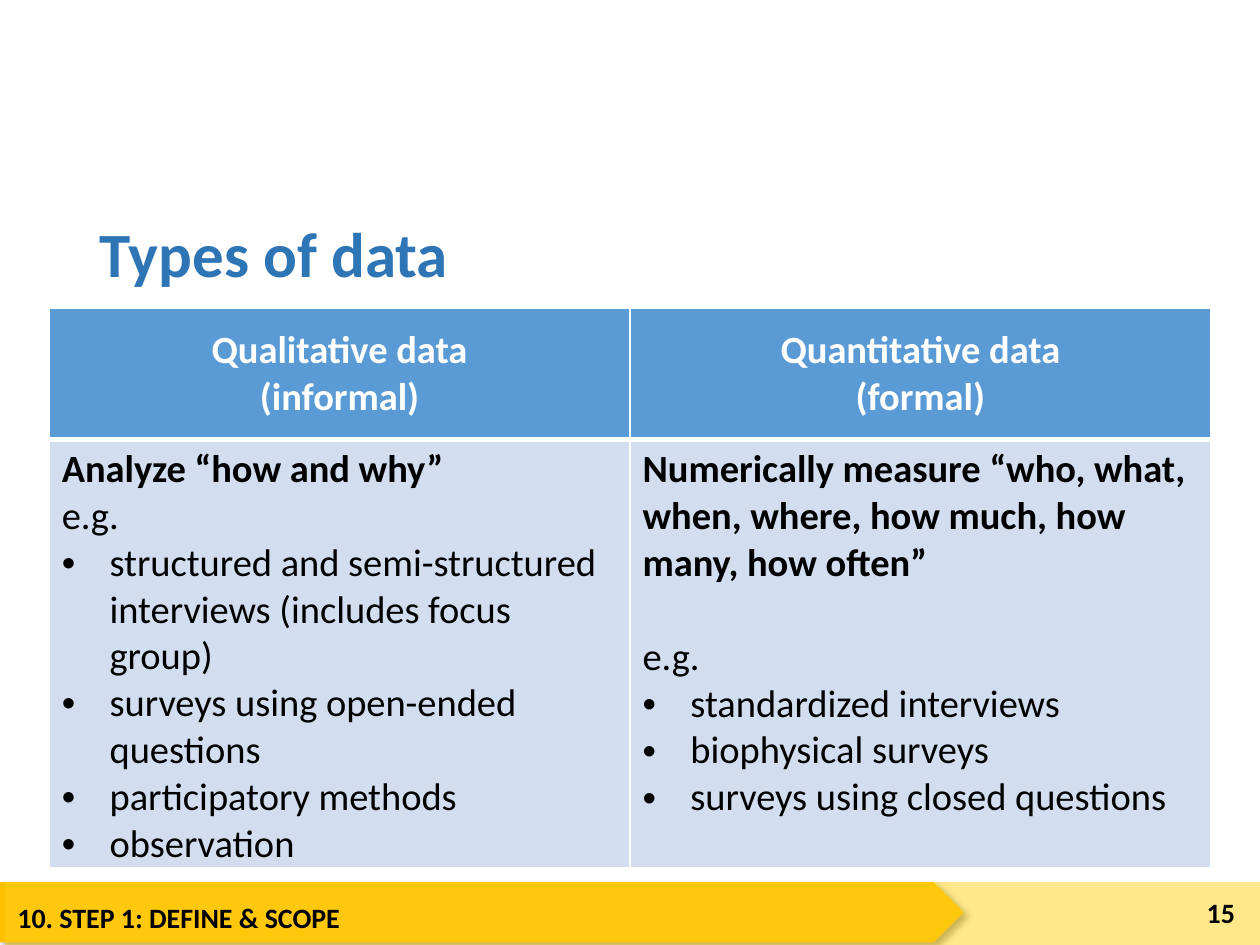
from lxml import etree
from pptx import Presentation
from pptx import util as u
from pptx.dml.color import RGBColor
from pptx.enum import shapes, text
from pptx.oxml import ns

WIDTH, HEIGHT = 10, 7.5
MARGIN, COLUMN = 0.39, 4.61
BANNER_TOP = 7
INDENT = 0.38
FONT = "Calibri"
HEADINGS = [("Qualitative data", "(informal)"), ("Quantitative data", "(formal)")]
DETAILS = [
    ("Analyze “how and why”", 0,
     ["structured and semi-structured interviews (includes focus group)",
      "surveys using open-ended questions", "participatory methods", "observation"]),
    ("Numerically measure “who, what, when, where, how much, how many, how often”", 27,
     ["standardized interviews", "biophysical surveys", "surveys using closed questions"]),
]


def color(value):
    """Turn a hex string into a colour."""
    return RGBColor.from_string(value)


def inches(*lengths):
    """Turn numbers into lengths in inches."""
    return [u.Inches(length) for length in lengths]


def child(parent, tag, **attributes):
    """Append a DrawingML element and return it."""
    element = etree.SubElement(parent, ns.qn(f"a:{tag}"))
    for key, value in attributes.items():
        element.set(key, str(value))
    return element


def add_run(paragraph, words, size, ink="000000", bold=True):
    """Add one formatted run to a paragraph."""
    run = paragraph.add_run()
    run.text = words
    run.font.name, run.font.size, run.font.bold = FONT, u.Pt(size), bold
    run.font.color.rgb = color(ink)


def add_label(slide, box, words, align, anchor):
    """Add a bold one-line text box."""
    frame = slide.shapes.add_textbox(*inches(*box)).text_frame
    frame.word_wrap, frame.vertical_anchor = True, anchor
    frame.paragraphs[0].alignment = align
    add_run(frame.paragraphs[0], words, 16)


def add_band(slide, preset, box, fill):
    """Add a borderless band of one colour."""
    band = slide.shapes.add_shape(preset, *inches(*box))
    band.shadow.inherit = False
    band.fill.solid()
    band.fill.fore_color.rgb = color(fill)
    band.line.fill.background()
    return band


def add_banner(slide):
    """Add the section arrow, its pale overlay, the section name and the page number."""
    arrow = add_band(slide, shapes.MSO_SHAPE.PENTAGON, (0, BANNER_TOP, 7.65, 0.48), "FFC000")
    effects = arrow._element.spPr.find(ns.qn("a:effectLst"))
    shadow = child(effects, "outerShdw", blurRad=u.Pt(4), dist=u.Pt(3), dir=45 * 60000)
    child(child(shadow, "srgbClr", val="000000"), "alpha", val=40000)
    overlay = add_band(slide, shapes.MSO_SHAPE.RECTANGLE,
                       (0.04, BANNER_TOP, WIDTH - 0.04, 0.53), "FFD01B")
    child(overlay._element.spPr.find(".//" + ns.qn("a:srgbClr")), "alpha", val=50000)
    add_label(slide, (0.04, BANNER_TOP + 0.1, 7.35, 0.41), "10. STEP 1: DEFINE & SCOPE",
              text.PP_ALIGN.LEFT, text.MSO_ANCHOR.TOP)
    add_label(slide, (9.17, BANNER_TOP + 0.04, 0.73, 0.4), "15",
              text.PP_ALIGN.RIGHT, text.MSO_ANCHOR.MIDDLE)


def add_title(slide, words):
    """Place and fill the title placeholder."""
    title = slide.shapes.title
    title.left, title.top, title.width, title.height = inches(0.69, 1.63, 8.62, 0.82)
    title.text_frame.vertical_anchor = text.MSO_ANCHOR.MIDDLE
    paragraph = title.text_frame.paragraphs[0]
    paragraph.alignment, paragraph.line_spacing = text.PP_ALIGN.LEFT, 0.9
    add_run(paragraph, words, 36, "2E75B6")


def style_cell(cell, fill, top, bottom):
    """Give a cell white borders and a solid fill."""
    properties = cell._tc.get_or_add_tcPr()
    for side, points in (("L", 1), ("R", 1), ("T", top), ("B", bottom)):
        line = child(properties, f"ln{side}", w=u.Pt(points))
        child(child(line, "solidFill"), "srgbClr", val="FFFFFF")
    cell.fill.solid()
    cell.fill.fore_color.rgb = color(fill)


def fill_heading(cell, lines):
    """Write a centred two-line column heading."""
    style_cell(cell, "5B9BD5", 1, 3)
    cell.vertical_anchor = text.MSO_ANCHOR.MIDDLE
    paragraph = cell.text_frame.paragraphs[0]
    paragraph.alignment = text.PP_ALIGN.CENTER
    add_run(paragraph, lines[0], 22, "FFFFFF")
    paragraph.add_line_break()
    add_run(paragraph, lines[1], 22, "FFFFFF")


def fill_details(cell, purpose, gap, examples):
    """Write the purpose of a data type and its bulleted examples."""
    style_cell(cell, "D2DEEF", 3, 1)
    frame = cell.text_frame
    add_run(frame.paragraphs[0], purpose, 22)
    intro = frame.add_paragraph()
    intro.space_before = u.Pt(gap)
    add_run(intro, "e.g.", 22, bold=False)
    for example in examples:
        item = frame.add_paragraph()
        properties = item._p.get_or_add_pPr()
        properties.set("marL", str(u.Inches(INDENT)))
        properties.set("indent", str(-u.Inches(INDENT)))
        child(properties, "buFont", typeface="Arial")
        child(properties, "buChar", char="•")
        add_run(item, example, 22, bold=False)


def add_comparison(slide):
    """Add the table that compares the data types."""
    table = slide.shapes.add_table(
        2, len(HEADINGS), *inches(MARGIN, 2.45, len(HEADINGS) * COLUMN, 4.36)).table
    table.rows[0].height, table.rows[1].height = inches(1.04, 3.32)
    for index, (heading, details) in enumerate(zip(HEADINGS, DETAILS)):
        table.columns[index].width = u.Inches(COLUMN)
        fill_heading(table.cell(0, index), heading)
        fill_details(table.cell(1, index), *details)


def main():
    """Build the slide and save it."""
    deck = Presentation()
    deck.slide_width, deck.slide_height = inches(WIDTH, HEIGHT)
    slide = deck.slides.add_slide(deck.slide_layouts.get_by_name("Title Only"))
    add_banner(slide)
    add_title(slide, "Types of data")
    add_comparison(slide)
    deck.save("out.pptx")


if __name__ == "__main__":
    main()
